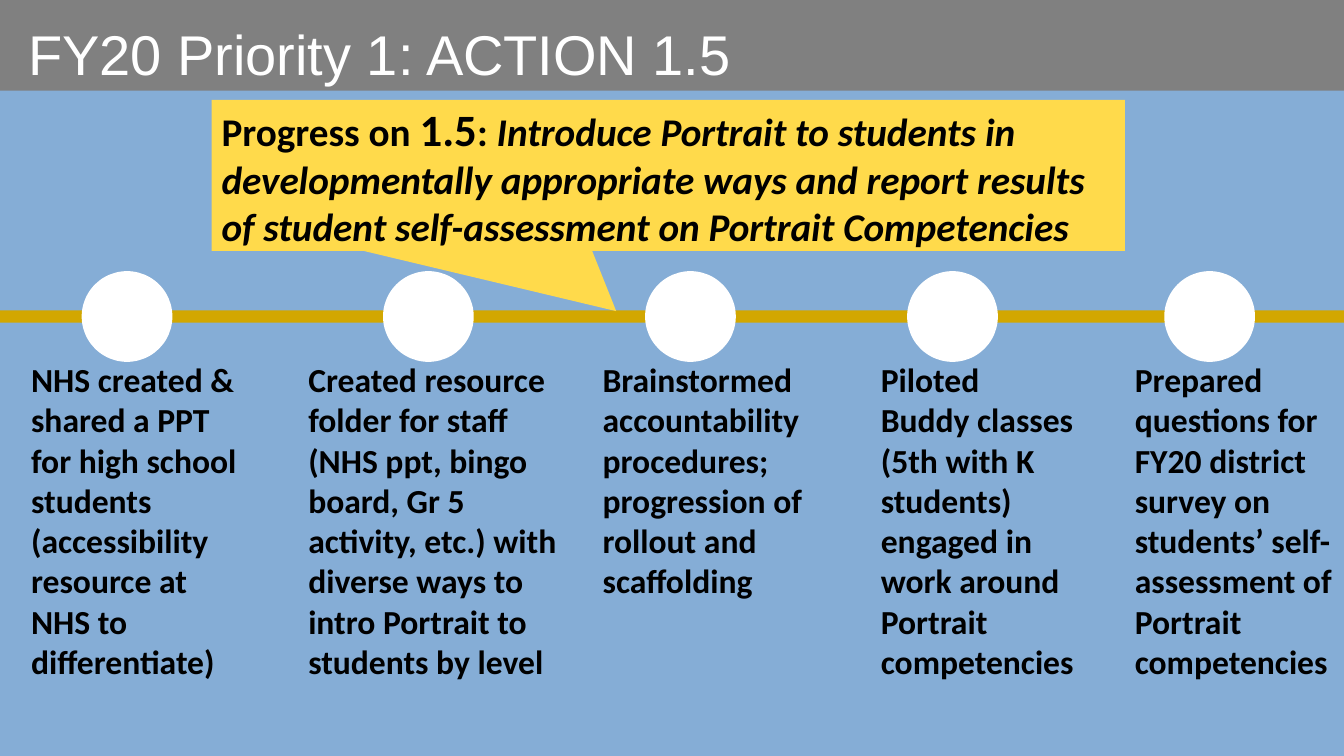
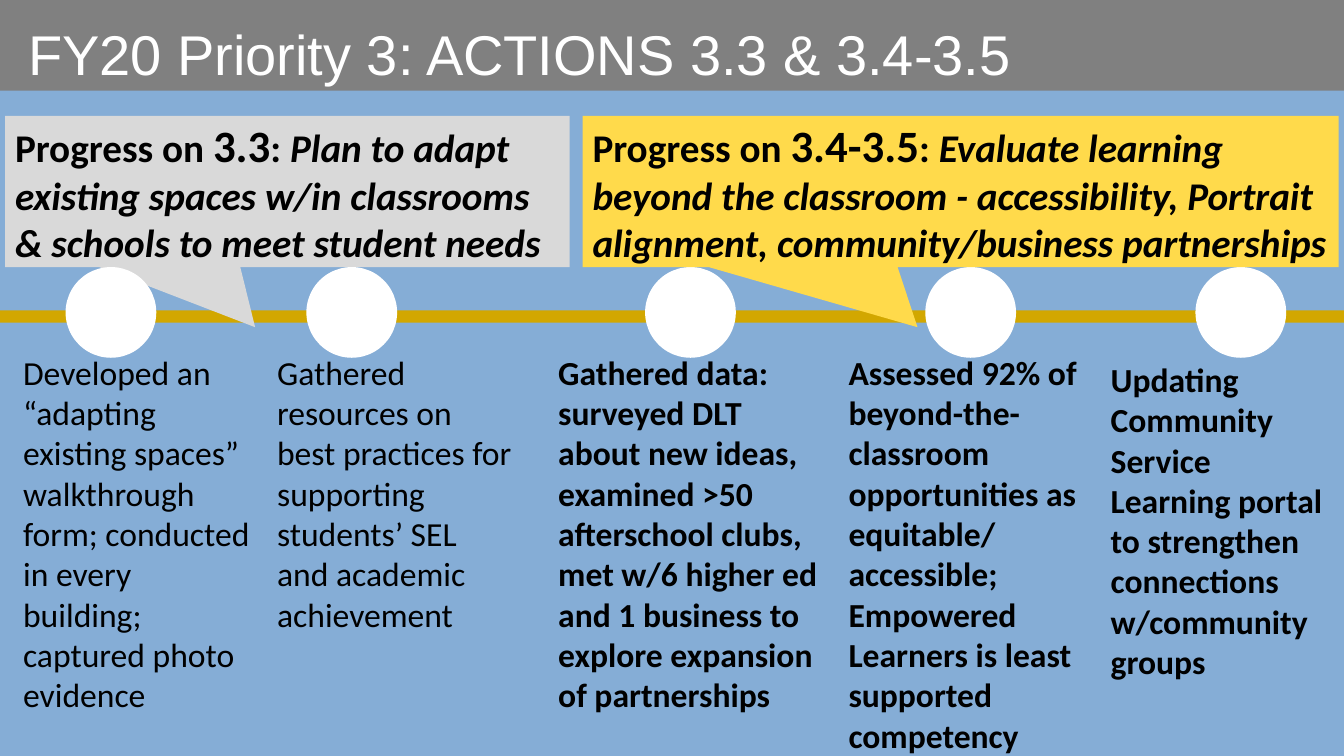
"""Build two progress timelines, each with a title band, callouts and milestones."""
from dataclasses import dataclass

from pptx import Presentation
from pptx.dml.color import RGBColor
from pptx.enum.shapes import MSO_SHAPE as Preset
from pptx.enum.text import MSO_ANCHOR as Anchor, MSO_AUTO_SIZE as AutoSize, PP_ALIGN as Align
from pptx.util import Inches, Pt

SLIDE_WIDTH = Inches(13.333)
SLIDE_HEIGHT = Inches(7.5)
TITLE_ONLY = 5

SKY = RGBColor(0x85, 0xAD, 0xD6)
BAND_GRAY = RGBColor(0x80, 0x80, 0x80)
RAIL_GOLD = RGBColor(0xD2, 0xA7, 0x00)
YELLOW = RGBColor(0xFF, 0xDA, 0x4B)
LIGHT_GRAY = RGBColor(0xD9, 0xD9, 0xD9)
WHITE = RGBColor(0xFF, 0xFF, 0xFF)
BLACK = RGBColor(0x00, 0x00, 0x00)

BAND_HEIGHT = 12
RAIL_TOP, RAIL_HEIGHT = 41.07, 1.6
DOT_WIDTH, DOT_HEIGHT = 6.75, 12
CALLOUT_HEIGHT = 20
CALLOUT_TAIL = (-0.057, 0.898)
COLUMN_HEIGHT = 50
LOW_TOP, HIGH_TOP = 46.8, 45.87


@dataclass(frozen=True)
class Milestone:
    dot_left: float
    left: float
    width: float
    paragraphs: tuple[str, ...]
    top: float = LOW_TOP
    bold: bool = True


@dataclass(frozen=True)
class Callout:
    left: float
    top: float
    width: float
    action: str
    goal: str
    color: RGBColor = YELLOW
    behind_dots: bool = False


@dataclass(frozen=True)
class Timeline:
    title: str
    dot_top: float
    callouts: tuple[Callout, ...]
    milestones: tuple[Milestone, ...]


TIMELINES = (
    Timeline(
        "FY20 Priority 1: ACTION 1.5",
        35.87,
        (
            Callout(15.75, 13.2, 67.95, "1.5",
                    "Introduce Portrait to students in developmentally appropriate ways "
                    "and report results of student self-assessment on Portrait Competencies"),
        ),
        (
            Milestone(6.08, 1.58, 17.7,
                      ("NHS created & shared a PPT for high school students "
                       "(accessibility resource at NHS to differentiate)",)),
            Milestone(28.5, 22.2, 20.1,
                      ("Created resource folder for staff (NHS ppt, bingo board, Gr 5 activity, "
                       "etc.) with diverse ways to intro Portrait to students by level",)),
            Milestone(48, 44.1, 17.1,
                      ("Brainstormed accountability procedures; "
                       "progression of rollout and scaffolding",)),
            Milestone(67.5, 64.8, 15.9,
                      ("Piloted Buddy classes (5th with K students)",
                       "engaged in work around Portrait competencies")),
            Milestone(86.63, 83.7, 16.3,
                      ("Prepared questions for FY20 district survey on students’ "
                       "self-assessment of Portrait competencies",)),
        ),
    ),
    Timeline(
        "FY20 Priority 3: ACTIONS 3.3 & 3.4-3.5",
        35.33,
        (
            Callout(0.38, 15.33, 42, "3.3",
                    "Plan to adapt existing spaces w/in classrooms & schools "
                    "to meet student needs",
                    LIGHT_GRAY, behind_dots=True),
            Callout(43.35, 15.33, 56.25, "3.4-3.5",
                    "Evaluate learning beyond the classroom - accessibility, "
                    "Portrait alignment, community/business partnerships"),
        ),
        (
            Milestone(4.88, 0.98, 18.9,
                      ("Developed an “adapting existing spaces” walkthrough form; "
                       "conducted in every building; captured photo evidence",),
                      HIGH_TOP, bold=False),
            Milestone(22.8, 19.88, 19.13,
                      ("Gathered resources on best practices for supporting "
                       "students’ SEL and academic achievement",),
                      HIGH_TOP, bold=False),
            Milestone(48, 40.8, 21,
                      ("Gathered data: surveyed DLT about new ideas, examined >50 "
                       "afterschool clubs, met w/6 higher ed and 1 business "
                       "to explore expansion of partnerships",),
                      HIGH_TOP),
            Milestone(68.85, 62.4, 20.63,
                      ("Assessed 92% of beyond-the-classroom opportunities as equitable/ "
                       "accessible; Empowered Learners is least supported competency",),
                      HIGH_TOP),
            Milestone(88.95, 81.9, 18.08,
                      ("Updating Community Service Learning portal to strengthen "
                       "connections w/community groups",)),
        ),
    ),
)


def box(left: float, top: float, width: float, height: float) -> tuple[int, ...]:
    """Turn percentages of the slide's size into lengths."""
    return (int(SLIDE_WIDTH * left / 100), int(SLIDE_HEIGHT * top / 100),
            int(SLIDE_WIDTH * width / 100), int(SLIDE_HEIGHT * height / 100))


def add_text(paragraph, text: str, *, size: float = 24, font: str = "Calibri",
             color: RGBColor = BLACK, bold: bool = False, italic: bool = False) -> None:
    """Append one formatted run to a paragraph."""
    run = paragraph.add_run()
    run.text = text
    run.font.size = Pt(size)
    run.font.name = font
    run.font.color.rgb = color
    run.font.bold = bold
    run.font.italic = italic


def add_filled(slide, preset: Preset, place: tuple[int, ...], color: RGBColor):
    """Draw a flat preset shape without an outline."""
    shape = slide.shapes.add_shape(preset, *place)
    shape.shadow.inherit = False
    shape.fill.solid()
    shape.fill.fore_color.rgb = color
    shape.line.fill.background()
    return shape


def set_title(slide, text: str) -> None:
    """Turn the title placeholder into the band across the top."""
    title = slide.shapes.title
    title.left, title.top, title.width, title.height = box(0, 0, 100, BAND_HEIGHT)
    title.fill.solid()
    title.fill.fore_color.rgb = BAND_GRAY
    frame = title.text_frame
    frame.auto_size = AutoSize.NONE
    frame.vertical_anchor = Anchor.MIDDLE
    frame.margin_left = Inches(0.28)
    frame.margin_top, frame.margin_bottom = Inches(0.2), Inches(0.04)
    paragraph = frame.paragraphs[0]
    paragraph.alignment = Align.LEFT
    add_text(paragraph, text, size=40, font="Arial", color=WHITE)


def add_callout(slide, callout: Callout) -> None:
    """Draw a callout that names an action and its goal."""
    place = box(callout.left, callout.top, callout.width, CALLOUT_HEIGHT)
    shape = add_filled(slide, Preset.RECTANGULAR_CALLOUT, place, callout.color)
    for index, value in enumerate(CALLOUT_TAIL):
        shape.adjustments[index] = value
    frame = shape.text_frame
    frame.word_wrap = True
    frame.vertical_anchor = Anchor.MIDDLE
    paragraph = frame.paragraphs[0]
    paragraph.alignment = Align.LEFT
    add_text(paragraph, "Progress on ", size=28, bold=True)
    add_text(paragraph, callout.action, size=32, bold=True)
    add_text(paragraph, ": ", size=28, bold=True)
    add_text(paragraph, callout.goal, size=28, bold=True, italic=True)


def add_description(slide, milestone: Milestone) -> None:
    """Write a milestone's text below the rail."""
    place = box(milestone.left, milestone.top, milestone.width, COLUMN_HEIGHT)
    frame = slide.shapes.add_textbox(*place).text_frame
    frame.word_wrap = True
    for index, text in enumerate(milestone.paragraphs):
        paragraph = frame.add_paragraph() if index else frame.paragraphs[0]
        add_text(paragraph, text, bold=milestone.bold)


def add_timeline(presentation, timeline: Timeline) -> None:
    """Add one slide with its rail, milestones and callouts."""
    slide = presentation.slides.add_slide(presentation.slide_layouts[TITLE_ONLY])
    slide.background.fill.solid()
    slide.background.fill.fore_color.rgb = SKY
    set_title(slide, timeline.title)
    add_filled(slide, Preset.RECTANGLE, box(0, RAIL_TOP, 100, RAIL_HEIGHT), RAIL_GOLD)
    for callout in timeline.callouts:
        if callout.behind_dots:
            add_callout(slide, callout)
    for milestone in timeline.milestones:
        place = box(milestone.dot_left, timeline.dot_top, DOT_WIDTH, DOT_HEIGHT)
        add_filled(slide, Preset.OVAL, place, WHITE)
        add_description(slide, milestone)
    for callout in timeline.callouts:
        if not callout.behind_dots:
            add_callout(slide, callout)


def main() -> None:
    """Build and save the presentation."""
    presentation = Presentation()
    presentation.slide_width = SLIDE_WIDTH
    presentation.slide_height = SLIDE_HEIGHT
    for timeline in TIMELINES:
        add_timeline(presentation, timeline)
    presentation.save("out.pptx")


if __name__ == "__main__":
    main()
